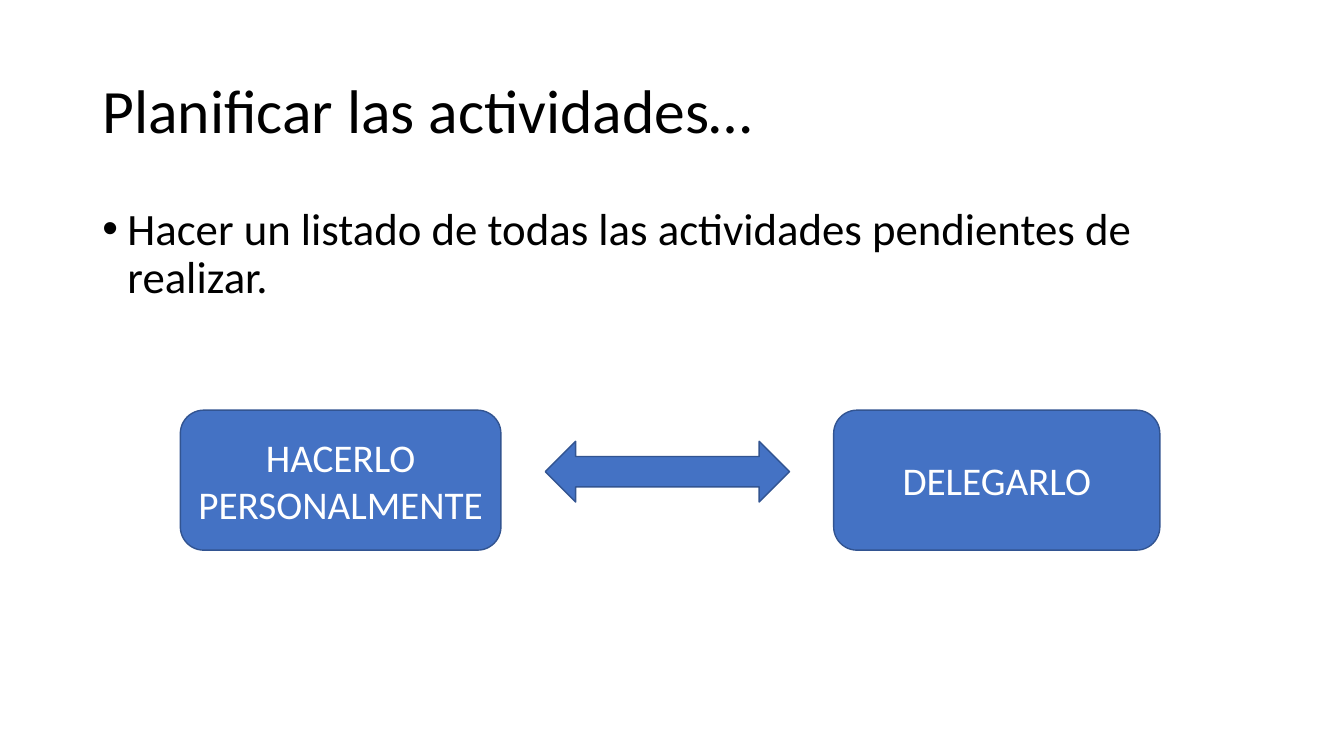
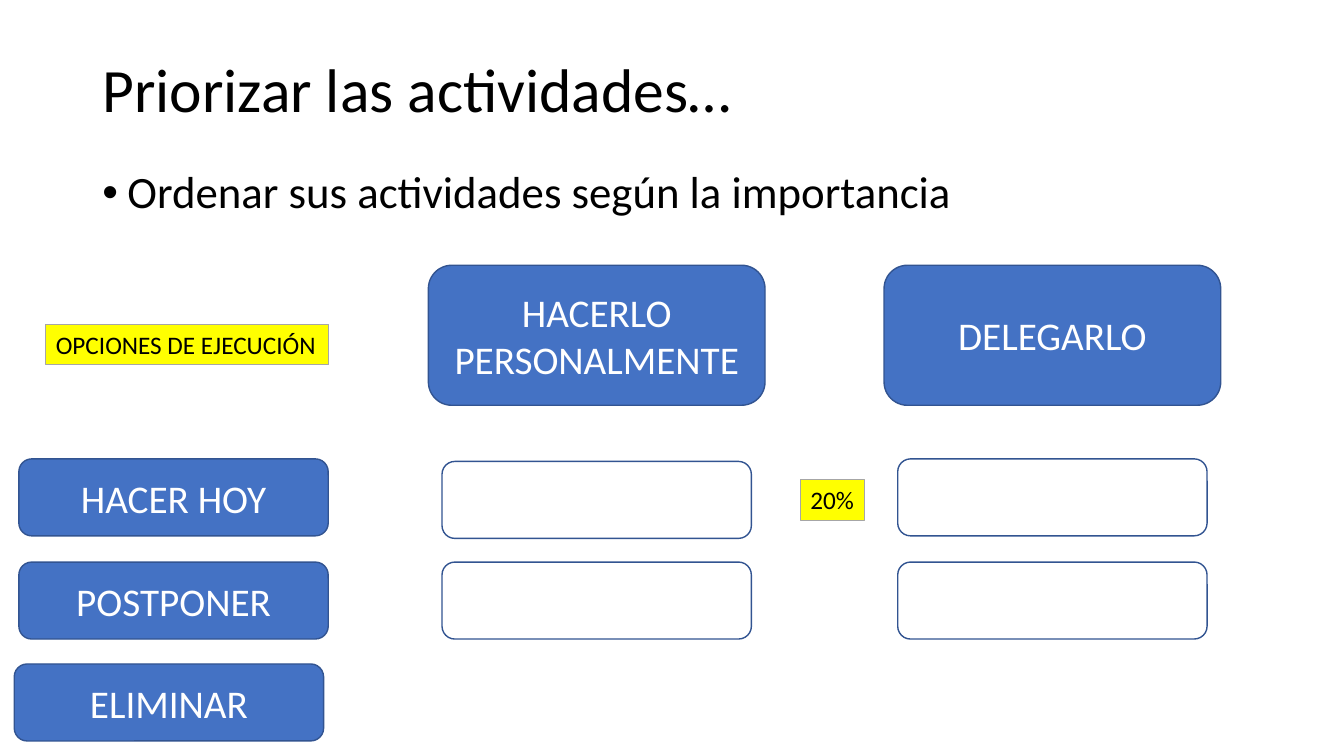
from dataclasses import dataclass

from lxml import etree
from pptx import Presentation
from pptx.dml.color import RGBColor
from pptx.enum.shapes import MSO_SHAPE
from pptx.enum.text import MSO_ANCHOR, MSO_AUTO_SIZE, PP_ALIGN
from pptx.oxml.ns import qn
from pptx.util import Pt

ROUND = MSO_SHAPE.ROUNDED_RECTANGLE
RECT = MSO_SHAPE.RECTANGLE
ARROW = MSO_SHAPE.LEFT_RIGHT_ARROW
LEFT, CENTER = PP_ALIGN.LEFT, PP_ALIGN.CENTER
MIDDLE = MSO_ANCHOR.MIDDLE
FIXED, GROW = MSO_AUTO_SIZE.NONE, MSO_AUTO_SIZE.SHAPE_TO_FIT_TEXT


@dataclass(frozen=True)
class Theme:
    font: str = "Calibri"
    black: RGBColor = RGBColor(0, 0, 0)
    white: RGBColor = RGBColor(255, 255, 255)
    blue: RGBColor = RGBColor(0x44, 0x72, 0xC4)
    navy: RGBColor = RGBColor(0x32, 0x54, 0x91)
    yellow: RGBColor = RGBColor(255, 255, 0)
    gray: RGBColor = RGBColor(0xA6, 0xA6, 0xA6)
    title: int = 44
    body: int = 32
    box: int = 28
    tag: int = 18


THEME = Theme()
MARGIN, WIDE = 66, 828
HEAD_H = 100


@dataclass(frozen=True)
class Box:
    """A blue shape, or only its outline when not filled."""
    x: float
    y: float
    w: float
    h: float
    text: str = ""
    filled: bool = True
    kind: MSO_SHAPE = ROUND


@dataclass(frozen=True)
class Tag:
    """A small yellow label."""
    x: float
    y: float
    w: float
    text: str


def style(frame, size: int, color: RGBColor, align: PP_ALIGN) -> None:
    for para in frame.paragraphs:
        para.alignment = align
        para.font.name = THEME.font
        para.font.size = Pt(size)
        para.font.color.rgb = color


def bullet(para) -> None:
    props = para._p.get_or_add_pPr()
    props.set("marL", str(Pt(18)))
    props.set("indent", str(Pt(-18)))
    font = etree.SubElement(props, qn("a:buFont"))
    font.set("typeface", "Arial")
    mark = etree.SubElement(props, qn("a:buChar"))
    mark.set("char", "•")


def add_page(deck, title: str, top: float, point: str, start: float):
    """Add a slide with its title and one bullet point."""
    page = deck.slides.add_slide(deck.slide_layouts[5])
    head = page.shapes.title
    head.left, head.top = Pt(MARGIN), Pt(top)
    head.width, head.height = Pt(WIDE), Pt(104.4)
    frame = head.text_frame
    frame.text = title
    frame.vertical_anchor = MIDDLE
    frame.auto_size = FIXED
    style(frame, THEME.title, THEME.black, LEFT)
    frame.paragraphs[0].line_spacing = 0.9

    body = page.shapes.add_textbox(Pt(MARGIN), Pt(start), Pt(WIDE), Pt(100))
    frame = body.text_frame
    frame.word_wrap = True
    frame.text = point
    style(frame, THEME.body, THEME.black, LEFT)
    para = frame.paragraphs[0]
    para.line_spacing = 0.9
    para.space_before = Pt(10)
    bullet(para)
    return page


def add_box(page, box: Box) -> None:
    shape = page.shapes.add_shape(
        box.kind, Pt(box.x), Pt(box.y), Pt(box.w), Pt(box.h))
    shape.shadow.inherit = False
    if box.filled:
        shape.fill.solid()
        shape.fill.fore_color.rgb = THEME.blue
    else:
        shape.fill.background()
    shape.line.color.rgb = THEME.navy
    shape.line.width = Pt(1)
    if box.text:
        frame = shape.text_frame
        frame.text = box.text
        frame.word_wrap = True
        frame.vertical_anchor = MIDDLE
        style(frame, THEME.box, THEME.white, CENTER)


def add_tag(page, tag: Tag) -> None:
    shape = page.shapes.add_shape(
        RECT, Pt(tag.x), Pt(tag.y), Pt(tag.w), Pt(29))
    shape.shadow.inherit = False
    shape.fill.solid()
    shape.fill.fore_color.rgb = THEME.yellow
    shape.line.color.rgb = THEME.gray
    shape.line.width = Pt(0.75)
    frame = shape.text_frame
    frame.text = tag.text
    frame.word_wrap = False
    frame.auto_size = GROW
    frame.vertical_anchor = MSO_ANCHOR.TOP
    style(frame, THEME.tag, THEME.black, LEFT)


def plan(deck) -> None:
    page = add_page(
        deck, "Planificar las actividades…", 29,
        "Hacer un listado de todas las actividades pendientes de realizar.",
        144)
    # Two choices and the arrow between them
    for box in (
        Box(128.8, 293, 229, HEAD_H, "HACERLO PERSONALMENTE"),
        Box(595.5, 293, 233, HEAD_H, "DELEGARLO"),
        Box(389.5, 315.2, 174.5, 43.4, kind=ARROW),
    ):
        add_box(page, box)


def rank(deck) -> None:
    page = add_page(
        deck, "Priorizar las actividades…", 14.2,
        "Ordenar sus actividades según la importancia", 118)
    head_w, cell_w, cell_h = 240.5, 221, 55
    cols = (306, 631.5)
    rows = (327.8, 401.5, 474.3)

    # Column heads
    for x, text in zip(cols, ("HACERLO\nPERSONALMENTE", "DELEGARLO")):
        add_box(page, Box(x, 189.5, head_w, HEAD_H, text))

    # Row heads; the last one sits slightly to the left
    names = ("HACER HOY", "POSTPONER", "ELIMINAR")
    for x, y, text in zip((13.5, 13.5, 10.2), rows, names):
        add_box(page, Box(x, y, cell_w, cell_h, text))

    # Empty cells, centred under their heads; the first is a little lower
    inset = (head_w - cell_w) / 2
    drops = ((1.8, 0), (0, 0))
    for y, line in zip(rows, drops):
        for x, drop in zip(cols, line):
            add_box(page, Box(x + inset, y + drop, cell_w, cell_h,
                              filled=False))

    # Yellow labels
    for tag in (Tag(32.8, 231.7, 201.8, "OPCIONES DE EJECUCIÓN"),
                Tag(571.8, 342.5, 46, "20%")):
        add_tag(page, tag)


def main() -> None:
    deck = Presentation()
    deck.slide_width, deck.slide_height = Pt(960), Pt(540)
    plan(deck)
    rank(deck)
    deck.save("out.pptx")


if __name__ == "__main__":
    main()
